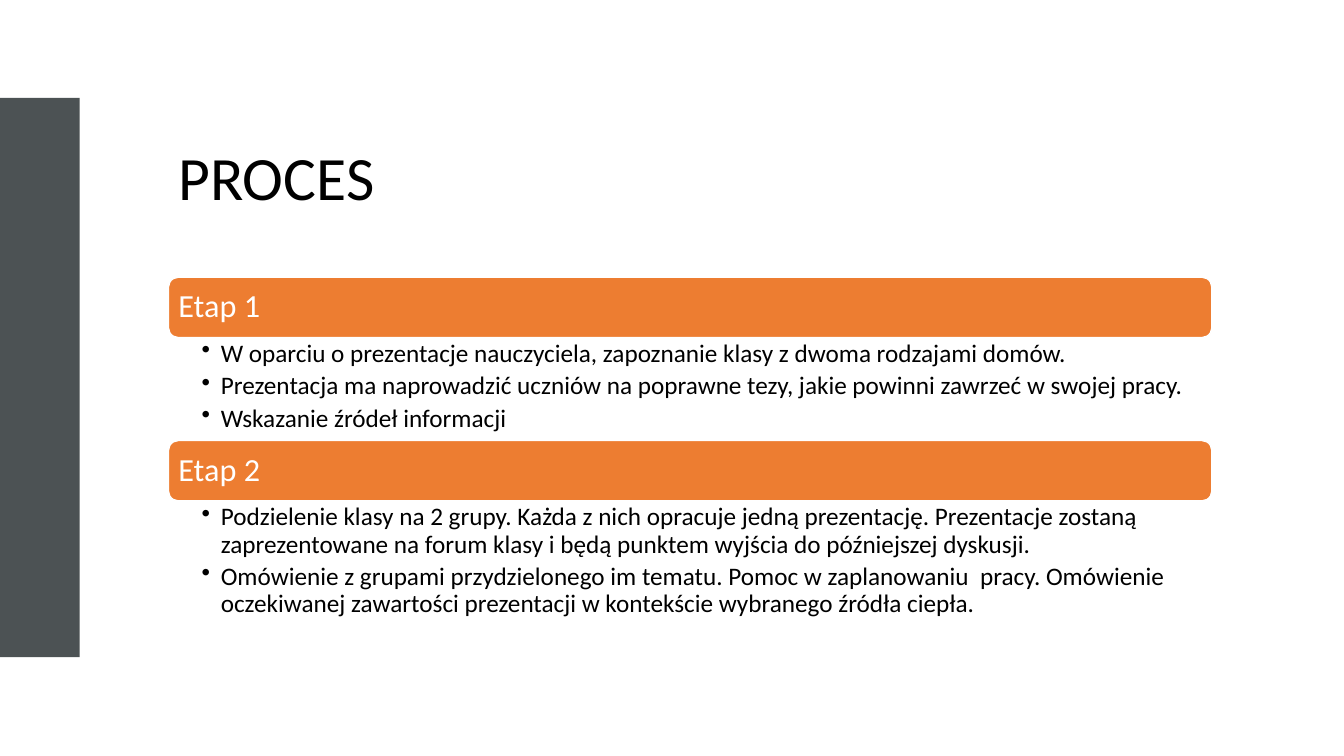
from lxml import etree
from pptx import Presentation
from pptx.dml.color import RGBColor
from pptx.enum.shapes import MSO_SHAPE
from pptx.enum.text import MSO_ANCHOR, PP_ALIGN
from pptx.oxml.ns import qn
from pptx.util import Inches, Pt

RECT = MSO_SHAPE.RECTANGLE
ROUNDED = MSO_SHAPE.ROUNDED_RECTANGLE
TOP, MIDDLE = MSO_ANCHOR.TOP, MSO_ANCHOR.MIDDLE
LEFT = PP_ALIGN.LEFT

STAGES = [
    ("Etap 1", 1.02, [
        "W oparciu o prezentacje nauczyciela, zapoznanie klasy z dwoma rodzajami domów.",
        "Prezentacja ma naprowadzić uczniów na poprawne tezy, jakie powinni zawrzeć w swojej pracy.",
        "Wskazanie źródeł informacji",
    ]),
    ("Etap 2", 1.25, [
        "Podzielenie klasy na 2 grupy. Każda z nich opracuje jedną prezentację. "
        "Prezentacje zostaną zaprezentowane na forum klasy i będą punktem wyjścia "
        "do późniejszej dyskusji.",
        "Omówienie z grupami przydzielonego im tematu. Pomoc w zaplanowaniu  pracy. "
        "Omówienie oczekiwanej zawartości prezentacji w kontekście wybranego źródła ciepła.",
    ]),
]


def color(value):
    return RGBColor.from_string(value)


def write(paragraph, text, size, ink="000000", font="Calibri", after=0, bullet=False):
    paragraph.alignment = LEFT
    paragraph.line_spacing = 0.9
    paragraph.space_after = Pt(after)
    run = paragraph.add_run()
    run.text = text
    run.font.size = Pt(size)
    run.font.name = font
    run.font.color.rgb = color(ink)
    if bullet:
        paragraph.level = 1
        properties = paragraph._p.get_or_add_pPr()
        properties.set("marL", str(Inches(0.19)))
        properties.set("indent", str(Inches(-0.19)))
        etree.SubElement(properties, qn("a:buChar"), char="•")


class ProcessSlide:
    accent = "ED7D31"
    sidebar = "4C5254"
    white = "FFFFFF"

    def __init__(self, deck):
        self.slide = deck.slides.add_slide(deck.slide_layouts[6])

    def block(self, kind, box, fill, line=None, opacity=None):
        shape = self.slide.shapes.add_shape(kind, *map(Inches, box))
        shape.shadow.inherit = False
        shape.fill.solid()
        shape.fill.fore_color.rgb = color(fill)
        if line:
            shape.line.color.rgb = color(line)
            shape.line.width = Pt(1)
        else:
            shape.line.fill.background()
        if opacity:
            tone = shape._element.spPr.find(qn("a:solidFill"))[0]
            etree.SubElement(tone, qn("a:alpha"), val=str(opacity * 1000))
        return shape

    def fit(self, frame, insets, anchor):
        frame.word_wrap = True
        frame.vertical_anchor = anchor
        (frame.margin_left, frame.margin_top,
         frame.margin_right, frame.margin_bottom) = map(Inches, insets)

    def text(self, box, lines, insets=(0.1, 0.05, 0.1, 0.05), anchor=TOP, **style):
        frame = self.slide.shapes.add_textbox(*map(Inches, box)).text_frame
        self.fit(frame, insets, anchor)
        for index, line in enumerate(lines):
            paragraph = frame.add_paragraph() if index else frame.paragraphs[0]
            write(paragraph, line, **style)

    def banner(self, box, label):
        frame = self.block(ROUNDED, box, self.accent, line=self.white).text_frame
        self.fit(frame, (0.07, 0.07, 0.07, 0.07), MIDDLE)
        write(frame.paragraphs[0], label, size=23, ink=self.white)


def main():
    deck = Presentation()
    deck.slide_width, deck.slide_height = Inches(13.33), Inches(7.5)
    process = ProcessSlide(deck)
    process.block(RECT, (0, 0.97, 0.79, 5.55), process.sidebar)
    process.block(RECT, (1.31, 0.97, 12.02, 5.55), process.white, opacity=80)

    left, width, banner_height = 1.67, 10.35, 0.6
    process.text((left, 1.15, width, 1.29), ["PROCES"], anchor=MIDDLE, size=44, after=6)
    top = 2.75
    for label, steps_height, steps in STAGES:
        process.banner((left, top, width, banner_height), label)
        top += banner_height
        process.text((left, top, width, steps_height), steps,
                     insets=(0.33, 0.03, 0.18, 0.03), size=18, after=3.6, bullet=True)
        top += steps_height
    deck.save("out.pptx")


if __name__ == "__main__":
    main()
